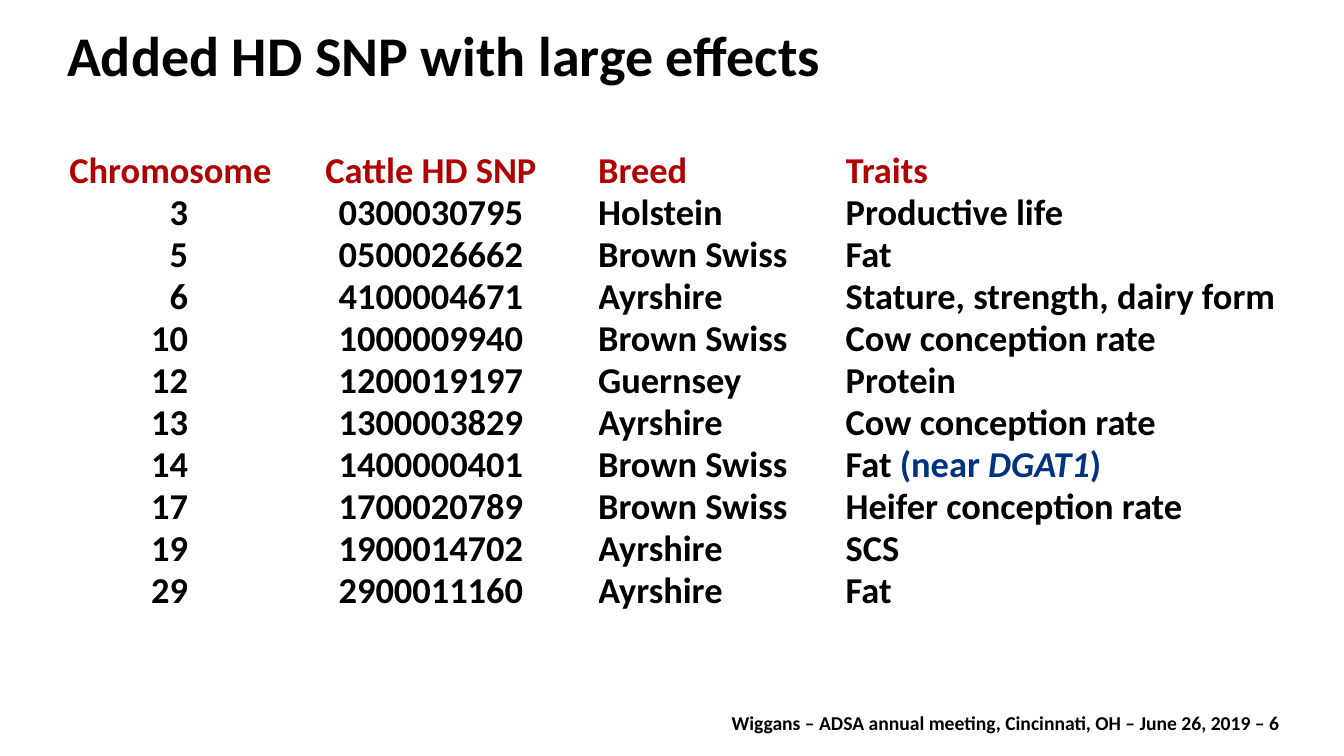
from dataclasses import dataclass

from pptx import Presentation
from pptx import util as u
from pptx.dml.color import RGBColor
from pptx.enum import text

SCALE = u.Inches(1) // 100  # 100 px to the inch


def px(length):
    return u.Emu(length * SCALE)


@dataclass(frozen=True)
class Theme:
    font: str = "Calibri"
    ink: str = "000000"
    header: str = "B00000"
    note: str = "00337F"
    title_size: int = 80
    table_size: int = 52
    line_size: int = 60
    footer_size: int = 28


@dataclass(frozen=True)
class Column:
    width: int
    align: text.PP_ALIGN = text.PP_ALIGN.LEFT
    right_inset: int = 0


LEFT, CENTER, RIGHT = text.PP_ALIGN.LEFT, text.PP_ALIGN.CENTER, text.PP_ALIGN.RIGHT
HEADER_COLUMNS = [Column(410, CENTER), Column(643, CENTER, 20), Column(491), Column(854)]
BODY_COLUMNS = [Column(410, RIGHT, 170)] + HEADER_COLUMNS[1:]

HEADERS = ["Chromosome", "Cattle HD SNP", "Breed", "Traits"]
SNPS = [
    ("3", "0300030795", "Holstein", "Productive life"),
    ("5", "0500026662", "Brown Swiss", "Fat"),
    ("6", "4100004671", "Ayrshire", "Stature, strength, dairy form"),
    ("10", "1000009940", "Brown Swiss", "Cow conception rate"),
    ("12", "1200019197", "Guernsey", "Protein"),
    ("13", "1300003829", "Ayrshire", "Cow conception rate"),
    ("14", "1400000401", "Brown Swiss", "Fat "),
    ("17", "1700020789", "Brown Swiss", "Heifer conception rate"),
    ("19", "1900014702", "Ayrshire", "SCS"),
    ("29", "2900011160", "Ayrshire", "Fat"),
]
GENE_ROW, TRAIT_COLUMN = 7, 3
GENE_NOTE = [("(near ", False), ("DGAT1", True), (")", False)]


class SlideBuilder:
    def __init__(self, slide, theme):
        self.slide = slide
        self.theme = theme

    def style_run(self, run, size, color, italic=None):
        font = run.font
        font.name, font.size, font.bold, font.italic = self.theme.font, u.Pt(size), True, italic
        font.color.rgb = RGBColor.from_string(color)

    def set_text(self, frame, words, size, color, align):
        frame.text = words
        paragraph = frame.paragraphs[0]
        paragraph.alignment = align
        self.style_run(paragraph.runs[0], size, color)
        return paragraph

    def title(self, words, left, top, width, height):
        shape = self.slide.shapes.title
        shape.left, shape.top, shape.width, shape.height = map(px, (left, top, width, height))
        frame = shape.text_frame
        frame.margin_left = frame.margin_right = frame.margin_top = frame.margin_bottom = 0
        frame.vertical_anchor = text.MSO_ANCHOR.TOP
        frame.auto_size = text.MSO_AUTO_SIZE.SHAPE_TO_FIT_TEXT
        self.set_text(frame, words, self.theme.title_size, self.theme.ink, LEFT)

    def footer(self, words, left, top, width, height):
        frame = self.slide.shapes.add_textbox(*map(px, (left, top, width, height))).text_frame
        frame.word_wrap = False
        frame.auto_size = text.MSO_AUTO_SIZE.SHAPE_TO_FIT_TEXT
        self.set_text(frame, words, self.theme.footer_size, self.theme.ink, RIGHT)

    def cell(self, cell, words, column, color):
        cell.fill.background()
        cell.margin_left = cell.margin_top = cell.margin_bottom = 0
        cell.margin_right = px(column.right_inset)
        paragraph = self.set_text(
            cell.text_frame, words, self.theme.table_size, color, column.align)
        paragraph.line_spacing = u.Pt(self.theme.line_size)

    def table(self, headers, records, left, top):
        rows = [headers, *records]
        row_height = u.Pt(self.theme.line_size)
        width = sum(column.width for column in HEADER_COLUMNS)
        table = self.slide.shapes.add_table(
            len(rows), len(headers), px(left), px(top), px(width), row_height * len(rows)).table
        table.first_row = table.horz_banding = False
        for table_column, column in zip(table.columns, HEADER_COLUMNS):
            table_column.width = px(column.width)
        for row_index, row in enumerate(rows):
            table.rows[row_index].height = row_height
            columns = BODY_COLUMNS if row_index else HEADER_COLUMNS
            color = self.theme.ink if row_index else self.theme.header
            for column_index, (words, column) in enumerate(zip(row, columns)):
                self.cell(table.cell(row_index, column_index), words, column, color)
        return table

    def add_note(self, cell, parts):
        for words, italic in parts:
            run = cell.text_frame.paragraphs[0].add_run()
            run.text = words
            self.style_run(run, self.theme.table_size, self.theme.note, italic)


def main():
    presentation = Presentation()
    presentation.slide_width, presentation.slide_height = px(2665), px(1500)
    slide = presentation.slides.add_slide(presentation.slide_layouts[5])
    builder = SlideBuilder(slide, Theme())
    builder.footer("Wiggans – ADSA annual meeting, Cincinnati, OH – June 26, 2019 – 6",
                   1402, 1406, 1144, 57)
    builder.title("Added HD SNP with large effects", 133, 40, 2398, 135)
    table = builder.table(HEADERS, SNPS, 133, 300)
    builder.add_note(table.cell(GENE_ROW, TRAIT_COLUMN), GENE_NOTE)
    presentation.save("out.pptx")


if __name__ == "__main__":
    main()
